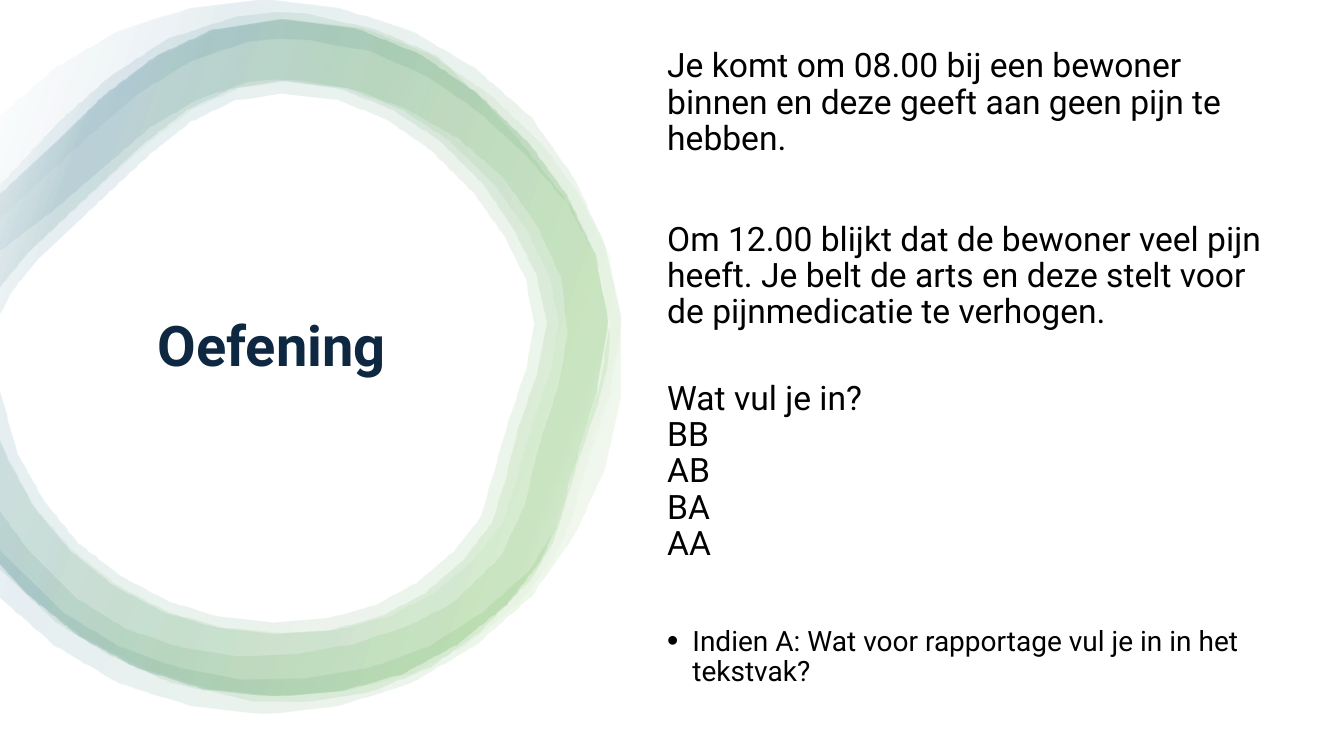
import math
from dataclasses import dataclass

import pptx
import pptx.dml.color
import pptx.enum.shapes
import pptx.enum.text
import pptx.oxml.ns
import pptx.util
from lxml import etree

Pt = pptx.util.Pt
WIDTH, HEIGHT = 960, 540


@dataclass(frozen=True)
class Theme:
    font: str = "Roboto"
    white: str = "FFFFFF"
    green: str = "4EA72E"
    blue: str = "156082"
    navy: str = "0E2841"
    black: str = "000000"
    title_size: int = 40
    body_size: int = 24
    bullet_size: int = 20
    band_opacity: int = 10
    gradient_angle: int = 160


THEME = Theme()

# Each band runs along its outer edge from the upper left to the lower left,
# then back along its inner edge. Points are (x, y) in points.
WAVY_OUTER = [
    (-1, 133), (43, 86), (78, 55), (119, 28), (168, 12), (197, 9), (219, 10),
    (268, 21), (312, 40), (348, 75), (371, 101), (407, 147), (427, 190),
    (435, 238), (433, 262), (427, 286), (413, 327), (395, 386), (379, 413),
    (342, 451), (307, 476), (263, 494), (215, 501), (180, 500), (122, 487),
    (79, 468), (40, 444), (-1, 405)]
WAVY_INNER = [
    (-1, 363), (20, 392), (54, 426), (89, 448), (130, 462), (171, 468),
    (213, 466), (253, 459), (292, 446), (323, 430), (357, 397), (374, 361),
    (384, 319), (398, 276), (405, 238), (400, 198), (383, 161), (359, 127),
    (327, 99), (290, 78), (253, 64), (215, 58), (195, 57), (176, 59),
    (141, 71), (107, 91), (41, 148), (-1, 180)]
WIDE_OUTER = [
    (-1, 140), (42, 101), (77, 68), (114, 40), (156, 21), (205, 14), (259, 20),
    (307, 39), (349, 67), (387, 103), (414, 140), (435, 182), (444, 229),
    (436, 279), (418, 334), (408, 371), (395, 400), (370, 431), (334, 460),
    (294, 481), (250, 493), (200, 497), (149, 492), (101, 477), (58, 454),
    (20, 424), (-1, 401)]
WIDE_INNER = [
    (-1, 310), (6, 327), (25, 362), (52, 393), (84, 418), (120, 437), (159, 448),
    (200, 452), (240, 450), (278, 440), (309, 424), (338, 400), (359, 373),
    (369, 341), (378, 308), (393, 264), (399, 230), (392, 197), (375, 163),
    (353, 132), (320, 100), (286, 78), (247, 63), (205, 58), (171, 63),
    (138, 78), (105, 103), (73, 132), (21, 180), (-1, 207)]
THICK_INNER = [
    (-1, 276), (12, 323), (31, 357), (55, 387), (86, 411), (120, 429),
    (156, 440), (195, 444), (234, 441), (267, 432), (297, 416), (324, 393),
    (343, 369), (352, 338), (361, 306), (376, 261), (381, 231), (375, 199),
    (360, 169), (338, 138), (307, 107), (275, 85), (239, 71), (200, 67),
    (167, 72), (136, 87), (107, 110), (77, 138), (26, 186), (9, 207), (-1, 226)]
CIRCLE_INNER = [
    (-1, 392), (46, 438), (86, 462), (128, 477), (173, 485), (218, 484),
    (263, 477), (305, 462), (343, 438), (377, 408), (398, 374), (412, 323),
    (427, 278), (435, 233), (426, 187), (405, 146), (375, 111), (341, 80),
    (305, 55), (264, 37), (221, 29), (199, 28), (177, 30), (136, 44),
    (99, 67), (64, 97), (-1, 157)]


def squeeze(points):
    """Narrow a curve slightly towards the left edge."""
    return [(0.98 * x - 1, y) for x, y in points]


def circle_arc(center_x, center_y, radius):
    angles = [math.radians(degrees) for degrees in range(-138, 139, 12)]
    return [(center_x + radius * math.cos(angle), center_y + radius * math.sin(angle))
            for angle in angles]


def set_gradient(shape, stops):
    shape.fill.gradient()
    shape.fill.gradient_angle = THEME.gradient_angle
    qn = pptx.oxml.ns.qn
    stop_list = next(shape.element.iter(qn("a:gsLst")))
    for stop in list(stop_list):
        stop_list.remove(stop)
    for position, color in stops:
        stop = etree.SubElement(stop_list, qn("a:gs"), pos=str(position * 1000))
        rgb = etree.SubElement(stop, qn("a:srgbClr"), val=color)
        etree.SubElement(rgb, qn("a:alpha"), val=str(THEME.band_opacity * 1000))


def add_band(slide, outer, inner, stops):
    start, *rest = outer + inner
    builder = slide.shapes.build_freeform(*start, scale=Pt(1))
    builder.add_line_segments(rest, close=True)
    shape = builder.convert_to_shape()
    shape.shadow.inherit = False
    shape.line.fill.background()
    set_gradient(shape, stops)


def add_background(slide):
    shape = slide.shapes.add_shape(
        pptx.enum.shapes.MSO_SHAPE.RECTANGLE, 0, 0, Pt(WIDTH), Pt(HEIGHT))
    shape.shadow.inherit = False
    shape.fill.solid()
    shape.fill.fore_color.rgb = pptx.dml.color.RGBColor.from_string(THEME.white)
    shape.line.fill.background()


def add_text_frame(slide, left, top, width, height, **frame_format):
    frame = slide.shapes.add_textbox(Pt(left), Pt(top), Pt(width), Pt(height)).text_frame
    values = {"word_wrap": True,
              "vertical_anchor": pptx.enum.text.MSO_ANCHOR.MIDDLE, **frame_format}
    for name, value in values.items():
        setattr(frame, name, value)
    return frame


def fill_paragraph(paragraph, text, color, size, bold=False, **paragraph_format):
    paragraph.text = text
    for name, value in {"line_spacing": 0.9, **paragraph_format}.items():
        setattr(paragraph, name, value)
    for run in paragraph.runs:
        for name, value in {"name": THEME.font, "size": Pt(size), "bold": bold}.items():
            setattr(run.font, name, value)
        run.font.color.rgb = pptx.dml.color.RGBColor.from_string(color)


def add_bullet(paragraph):
    properties = paragraph._p.get_or_add_pPr()
    properties.set("marL", str(Pt(18)))
    properties.set("indent", str(Pt(-18)))
    for tag, name, value in (("a:buSzPct", "val", "115000"),
                             ("a:buFont", "typeface", "Arial"),
                             ("a:buChar", "char", "•")):
        etree.SubElement(properties, pptx.oxml.ns.qn(tag)).set(name, value)


def add_ring(slide):
    fade = [(2, THEME.white), (16, THEME.green), (85, THEME.blue), (100, THEME.white)]
    bands = [
        (WAVY_OUTER, WAVY_INNER, [(37, THEME.green), *fade[2:]]),
        (WIDE_OUTER, WIDE_INNER, [fade[0], (54, THEME.green), fade[3]]),
        (squeeze(WIDE_OUTER), THICK_INNER, fade),
        (squeeze(WIDE_OUTER), squeeze(WIDE_INNER), fade),
        (circle_arc(189, 255, 255), CIRCLE_INNER, [*fade[:2], (74, THEME.blue), fade[3]]),
    ]
    for outer, inner, stops in bands:
        add_band(slide, outer, inner, stops)


def add_exercise(slide):
    frame = add_text_frame(slide, 469.5, 30, 445, 466)
    items = [
        ("Je komt om 08.00 bij een bewoner binnen en deze geeft aan geen pijn te hebben.", 0),
        ("Om 12.00 blijkt dat de bewoner veel pijn heeft. Je belt de arts en deze "
         "stelt voor de pijnmedicatie te verhogen.", 46),
        ("Wat vul je in?\vBB\vAB\vBA\vAA", 36),
    ]
    paragraph = frame.paragraphs[0]
    for text, space in items:
        fill_paragraph(paragraph, text, THEME.black, THEME.body_size, space_before=Pt(space))
        paragraph = frame.add_paragraph()
    add_bullet(paragraph)
    fill_paragraph(paragraph, "Indien A: Wat voor rapportage vul je in in het tekstvak?",
                   THEME.black, THEME.bullet_size, space_before=Pt(46))


def main():
    presentation = pptx.Presentation()
    presentation.slide_width, presentation.slide_height = Pt(WIDTH), Pt(HEIGHT)
    slide = presentation.slides.add_slide(presentation.slide_layouts[6])
    add_background(slide)
    add_ring(slide)
    title = add_text_frame(slide, 17, 91, 354, 426, margin_bottom=Pt(114))
    fill_paragraph(title.paragraphs[0], "Oefening", THEME.navy, THEME.title_size,
                   bold=True, alignment=pptx.enum.text.PP_ALIGN.CENTER)
    add_exercise(slide)
    presentation.save("out.pptx")


if __name__ == "__main__":
    main()
